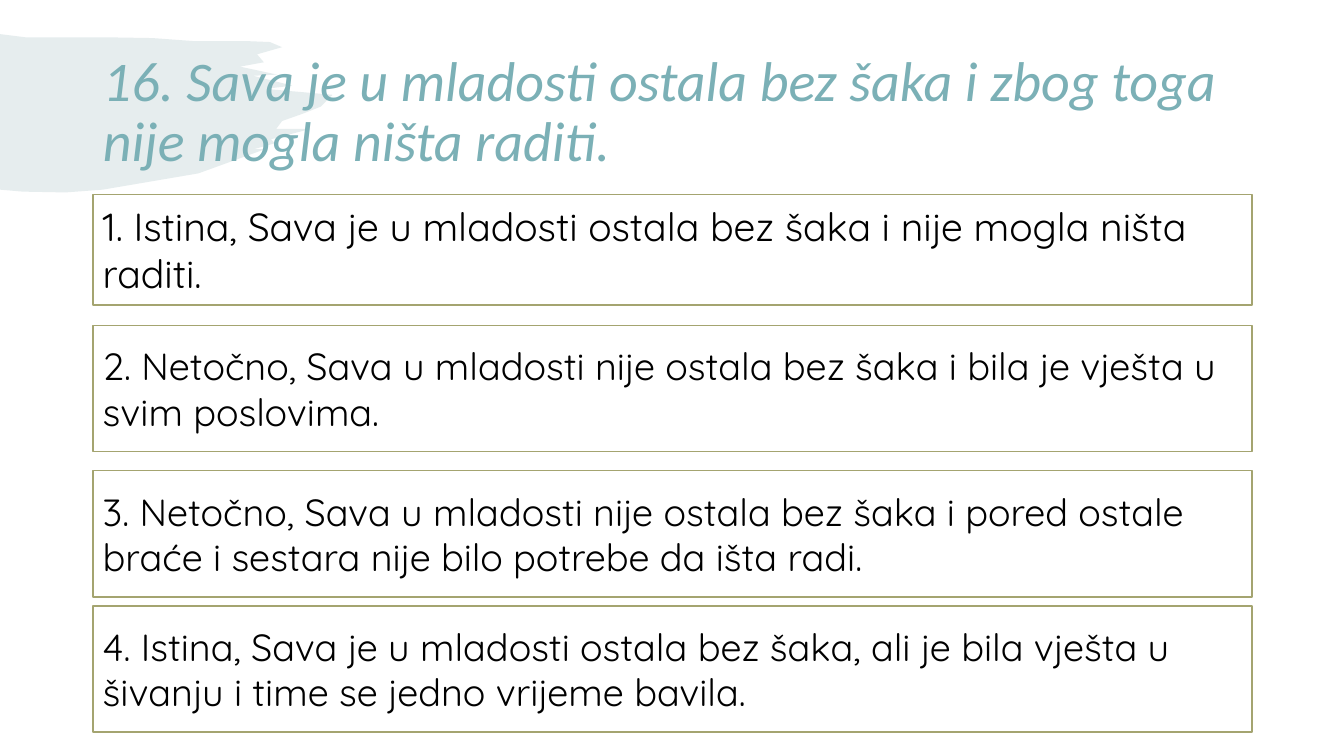
from dataclasses import dataclass

from lxml.etree import SubElement
from pptx import Presentation
from pptx.dml.color import RGBColor as RGB
from pptx.enum.shapes import MSO_SHAPE as Preset
from pptx.enum.text import MSO_ANCHOR as Anchor, MSO_AUTO_SIZE as AutoSize, PP_ALIGN as Align
from pptx.oxml.ns import qn
from pptx.util import Cm, Pt

# Content
QUESTION = "16. Sava je u mladosti ostala bez šaka i zbog toga nije mogla ništa raditi."
# answer, top and height in cm, type size
ANSWERS = [
    ("1. Istina, Sava je u mladosti ostala bez šaka i nije mogla ništa raditi.", 4.9, 2.79, 28),
    ("2. Netočno, Sava u mladosti nije ostala bez šaka i bila je vješta u svim poslovima.",
     8.2, 3.18, 27),
    ("3. Netočno, Sava u mladosti nije ostala bez šaka i pored ostale braće i sestara "
     "nije bilo potrebe da išta radi.", 11.86, 3.18, 27),
    ("4. Istina, Sava je u mladosti ostala bez šaka, ali je bila vješta u šivanju "
     "i time se jedno vrijeme bavila.", 15.27, 3.18, 27),
]

# Brush stroke in cm: top edge, ragged right end, bottom edge
BRUSH = [
    (0, 0.86), (0.64, 0.94), (2.6, 0.94), (3.84, 0.96), (4.93, 1.04), (6.3, 1.04), (6.8, 1.06),
    (7.11, 1.19), (6.48, 1.37), (6.65, 1.57), (6.05, 1.68), (6.98, 1.88), (6.38, 1.91),
    (7.37, 2.16), (6.68, 2.24), (8.38, 2.39), (8.08, 2.69), (7.62, 2.87), (7.11, 3.05),
    (6.96, 3.25), (7.82, 3.25), (6.83, 3.51), (6.93, 3.61), (6.4, 3.76), (6.68, 3.76),
    (5, 4.37), (2.59, 4.78), (1.65, 4.85), (0.58, 4.83), (0, 4.78),
]


@dataclass(frozen=True)
class Theme:
    question: RGB = RGB(0x7B, 0xB0, 0xB6)
    brush: RGB = RGB(0x82, 0xA8, 0xAB)
    brush_alpha: int = 20
    answer: RGB = RGB(0, 0, 0)
    box: RGB = RGB(0xFF, 0xFF, 0xFF)
    border: RGB = RGB(0xA4, 0xA4, 0x70)
    question_font: str = "Calibri"
    answer_font: str = "Quicksand"
    question_size: int = 40


THEME = Theme()
LEFT, WIDTH = Cm(2.34), Cm(29.21)


def write(shape, text, font_name, size, color, italic=False):
    frame = shape.text_frame
    frame.text = text
    frame.word_wrap = True
    frame.auto_size = AutoSize.NONE
    frame.vertical_anchor = Anchor.MIDDLE
    paragraph = frame.paragraphs[0]
    paragraph.alignment = Align.LEFT
    font = paragraph.font
    font.name, font.size, font.italic = font_name, Pt(size), italic
    font.color.rgb = color
    return paragraph


def add_question(slide):
    title = slide.shapes.title
    title.left, title.top, title.width, title.height = LEFT, Cm(1.02), WIDTH, Cm(3.68)
    paragraph = write(title, QUESTION, THEME.question_font, THEME.question_size,
                      THEME.question, italic=True)
    paragraph.line_spacing = 0.9


def add_brush(slide):
    first, *rest = [(Cm(x), Cm(y)) for x, y in BRUSH]
    builder = slide.shapes.build_freeform(*first)
    builder.add_line_segments(rest, close=True)
    brush = builder.convert_to_shape()
    brush.shadow.inherit = False
    brush.fill.solid()
    brush.fill.fore_color.rgb = THEME.brush
    brush.line.fill.background()
    tint = brush.element.spPr.find(qn("a:solidFill"))[0]
    SubElement(tint, qn("a:alpha"), val=str(THEME.brush_alpha * 1000))
    # The stroke lies behind the question
    slide.shapes.title.element.addprevious(brush.element)


def add_answer(slide, text, top, height, size):
    box = slide.shapes.add_shape(Preset.ACTION_BUTTON_CUSTOM, LEFT, Cm(top), WIDTH, Cm(height))
    box.shadow.inherit = False
    box.fill.solid()
    box.fill.fore_color.rgb = THEME.box
    box.line.color.rgb = THEME.border
    box.line.width = Pt(1)
    write(box, text, THEME.answer_font, size, THEME.answer)


def main():
    deck = Presentation()
    deck.slide_width, deck.slide_height = Cm(33.87), Cm(19.05)
    slide = deck.slides.add_slide(deck.slide_layouts[5])
    add_question(slide)
    add_brush(slide)
    for answer in ANSWERS:
        add_answer(slide, *answer)
    deck.save("out.pptx")


if __name__ == "__main__":
    main()
